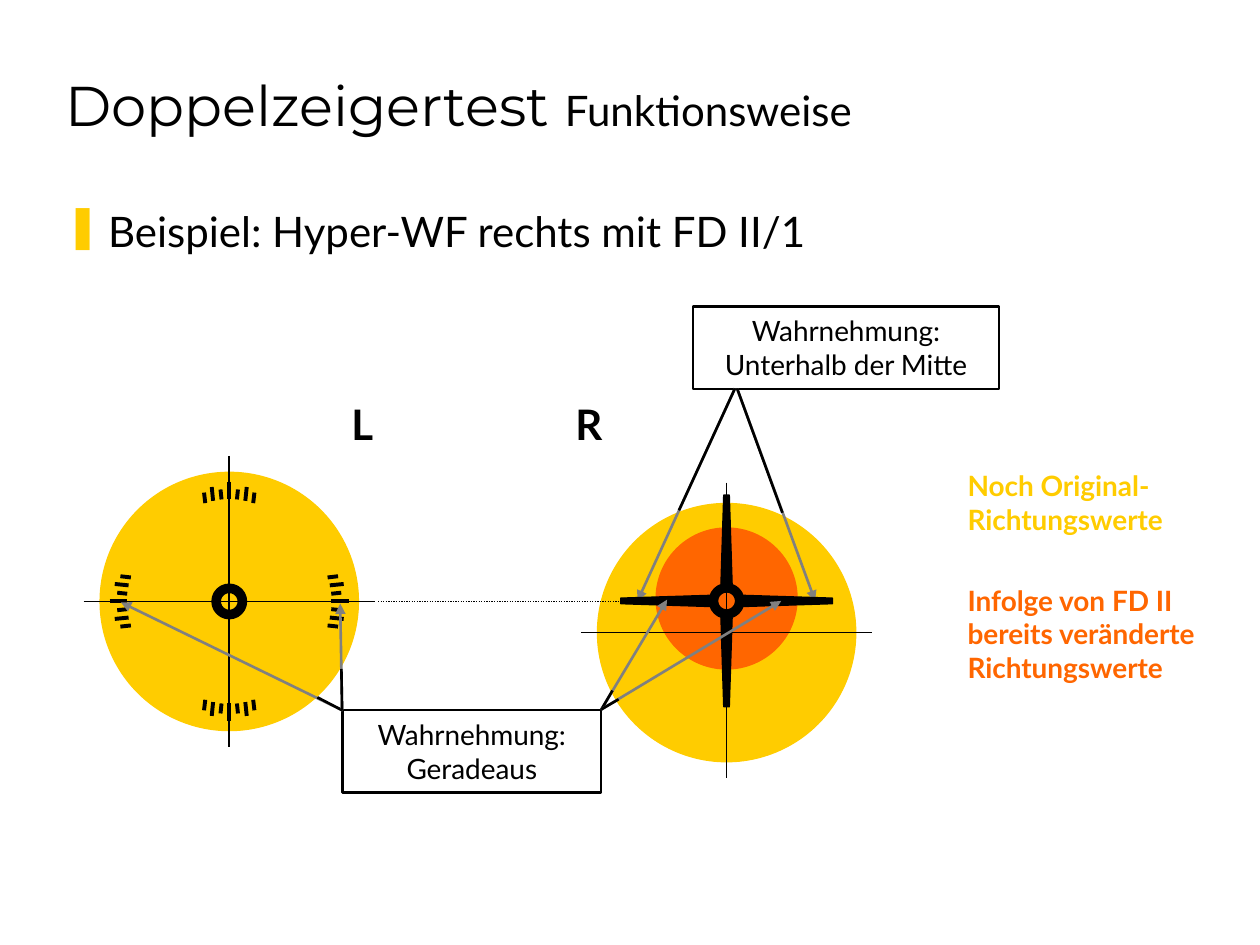
"""Build the slide explaining how the double pointer test works."""
from dataclasses import dataclass
from typing import NamedTuple

from lxml import etree
from pptx import Presentation, util as u
from pptx.dml.color import RGBColor
from pptx.enum import dml, shapes, text
from pptx.oxml import ns


@dataclass(frozen=True)
class Theme:
    black: str = "000000"
    white: str = "FFFFFF"
    gray: str = "808080"
    yellow: str = "FFCC00"
    orange: str = "FF6600"
    body_font: str = "Lato"
    title_font: str = "Montserrat"
    title: float = 32
    large: float = 24
    small: float = 16


T = Theme()


class Point(NamedTuple):
    x: float
    y: float


class Box(NamedTuple):
    x: float
    y: float
    w: float
    h: float


class Label(NamedTuple):
    words: str
    box: Box
    color: str
    size: float


class Pointer(NamedTuple):
    start: Point
    tip: Point
    edge: Point


class Tick(NamedTuple):
    outer_offset: float
    outer: float
    inner_offset: float
    inner: float


LEFT, RIGHT = Point(131, 343.7), Point(415.2, 343.4)
RIGHT_DISC = Point(415.2, 361.5)
DISC_R, FIXATION_R, RING_R, CROSS_R = 73.8, 40.3, 7.5, 83.2
NEEDLE = [(9.7, -3.2), (60.5, -1.6), (60.5, 1.6), (9.7, 3.2)]
DIRECTIONS = [(0, -1), (0, 1), (1, 0), (-1, 0)]
HALF_SCALE = [Tick(5, 64, 4.4, 58.3), Tick(10, 65.4, 9.2, 57.5), Tick(14.4, 62.2, 13.7, 56.2)]
SCALE = [Tick(0, 68.4, 0, 58.3)] + [
    Tick(side * t.outer_offset, t.outer, side * t.inner_offset, t.inner)
    for t in HALF_SCALE for side in (-1, 1)
]
LABELS = [
    Label("Noch Original-\nRichtungswerte", Box(545.8, 264.2, 156, 46), T.yellow, T.small),
    Label("Infolge von FD II bereits veränderte Richtungswerte",
          Box(545.8, 329.8, 168, 65), T.orange, T.small),
    Label("L", Box(193.7, 223.9, 28.8, 36), T.black, T.large),
    Label("R", Box(321.8, 223.9, 28.8, 36), T.black, T.large),
]
CALLOUTS = [
    (Label("Wahrnehmung: Unterhalb der Mitte", Box(396, 175, 175, 47.2), T.black, T.small), [
        Pointer(Point(420, 222), Point(364.3, 343.4), Point(388, 291.6)),
        Pointer(Point(421.2, 222), Point(465.8, 343.4), Point(447.1, 293)),
    ]),
    (Label("Wahrnehmung: Geradeaus", Box(195.8, 405.8, 147.8, 47.2), T.black, T.small), [
        Pointer(Point(195.8, 406), Point(69.1, 344.2), Point(181.4, 398.5)),
        Pointer(Point(195.5, 405.7), Point(194.4, 344.9), Point(195.1, 382.3)),
        Pointer(Point(343.6, 405.5), Point(381.2, 342.7), Point(350, 394.6)),
        Pointer(Point(343.6, 405.4), Point(446.4, 343.4), Point(353.5, 399.6)),
    ]),
]


def rotate(center: Point, direction: tuple, radius: float, offset: float) -> Point:
    """Place a point at a radius along a direction and an offset across it."""
    dx, dy = direction
    return Point(center.x + dx * radius + abs(dy) * offset,
                 center.y + dy * radius + abs(dx) * offset)


def add_text(p, words: str, *, size: float, color: str = T.black,
             font: str = T.body_font, bold: bool = False) -> None:
    """Append formatted text to a paragraph, breaking it at newlines."""
    for i, line in enumerate(words.split("\n")):
        if i:
            p.add_line_break()
        r = p.add_run()
        r.text = line
        r.font.name, r.font.size, r.font.bold = font, u.Pt(size), bold
        r.font.color.rgb = RGBColor.from_string(color)


def add_box(s, box: Box, anchor=text.MSO_ANCHOR.TOP):
    """Add a wrapping text box and return its first paragraph."""
    tf = s.shapes.add_textbox(*map(u.Pt, box)).text_frame
    tf.word_wrap, tf.vertical_anchor = True, anchor
    return tf.paragraphs[0]


def add_bullet(p, char: str, color: str, indent: float) -> None:
    """Give a paragraph a coloured bullet with a hanging indent."""
    pPr = p._p.get_or_add_pPr()
    pPr.set("marL", str(u.Pt(indent)))
    pPr.set("indent", str(-u.Pt(indent)))
    clr = etree.SubElement(pPr, ns.qn("a:buClr"))
    etree.SubElement(clr, ns.qn("a:srgbClr"), val=color)
    etree.SubElement(pPr, ns.qn("a:buChar"), char=char)


def style(sp, fill: str | None, line: str, width: float) -> None:
    """Set the fill and outline of a shape without a shadow."""
    sp.shadow.inherit = False
    if fill:
        sp.fill.solid()
        sp.fill.fore_color.rgb = RGBColor.from_string(fill)
    else:
        sp.fill.background()
    sp.line.color.rgb = RGBColor.from_string(line)
    sp.line.width = u.Pt(width)


def add_circle(s, c: Point, radius: float, fill: str | None, line: str, width: float = 0.75) -> None:
    """Draw a circle around a centre."""
    box = Box(c.x - radius, c.y - radius, 2 * radius, 2 * radius)
    style(s.shapes.add_shape(shapes.MSO_SHAPE.OVAL, *map(u.Pt, box)), fill, line, width)


def add_line(s, a: Point, b: Point, width: float, color: str = T.black, *,
             arrow: bool = False, dotted: bool = False) -> None:
    """Draw a straight line, optionally dotted or with an arrowhead at its end."""
    c = s.shapes.add_connector(shapes.MSO_CONNECTOR.STRAIGHT, *map(u.Pt, (*a, *b)))
    c.line.width, c.line.color.rgb = u.Pt(width), RGBColor.from_string(color)
    if dotted:
        c.line.dash_style = dml.MSO_LINE.ROUND_DOT
    if arrow:
        etree.SubElement(c.line._get_or_add_ln(), ns.qn("a:tailEnd"), type="triangle")
    etree.SubElement(c._element.spPr, ns.qn("a:effectLst"))


def add_cross(s, c: Point) -> None:
    """Draw the horizontal and vertical axes of a disc."""
    for direction in ((1, 0), (0, 1)):
        add_line(s, rotate(c, direction, -CROSS_R, 0), rotate(c, direction, CROSS_R, 0), 1)


def add_needle(s, direction: tuple) -> None:
    """Draw one tapering pointer of the right eye."""
    pts = [tuple(map(u.Pt, rotate(RIGHT, direction, *corner))) for corner in NEEDLE]
    fb = s.shapes.build_freeform(*pts[0], scale=1.0)
    fb.add_line_segments(pts[1:], close=True)
    style(fb.convert_to_shape(), T.black, T.black, 0.75)


def add_callout(s, label: Label, pointers: list[Pointer]) -> None:
    """Draw a framed label with arrows that are black until they reach a disc."""
    sp = s.shapes.add_shape(shapes.MSO_SHAPE.RECTANGLE, *map(u.Pt, label.box))
    style(sp, T.white, T.black, 1.5)
    tf = sp.text_frame
    tf.word_wrap, tf.vertical_anchor = True, text.MSO_ANCHOR.MIDDLE
    p = tf.paragraphs[0]
    p.alignment = text.PP_ALIGN.CENTER
    add_text(p, label.words, size=label.size, color=label.color)
    for pointer in pointers:
        add_line(s, pointer.start, pointer.tip, 1.5, T.gray, arrow=True)
        add_line(s, pointer.start, pointer.edge, 1.5)


def main() -> None:
    """Compose the slide and save it."""
    prs = Presentation()
    prs.slide_width, prs.slide_height = u.Pt(720), u.Pt(540)
    s = prs.slides.add_slide(prs.slide_layouts[6])

    p = add_box(s, Box(30.2, 17.3, 659.5, 64.8), text.MSO_ANCHOR.BOTTOM)
    add_text(p, "Doppelzeigertest ", size=T.title, font=T.title_font)
    add_text(p, "Funktionsweise", size=T.large)
    p = add_box(s, Box(30.2, 113.8, 681, 36))
    add_bullet(p, "❚", T.yellow, 24.5)
    add_text(p, "Beispiel: Hyper-WF rechts mit FD II/1", size=T.large)
    for label in LABELS:
        add_text(add_box(s, label.box), label.words, size=label.size, color=label.color, bold=True)

    for c in (RIGHT_DISC, LEFT):
        add_circle(s, c, DISC_R, T.yellow, T.yellow)
    add_circle(s, Point(RIGHT.x, 342), FIXATION_R, T.orange, T.orange)
    for c in (RIGHT_DISC, LEFT):
        add_cross(s, c)
    add_line(s, Point(RIGHT.x, 275.8), Point(RIGHT.x, 414), 1)

    add_callout(s, *CALLOUTS[0])
    for c in (RIGHT, LEFT):
        add_circle(s, c, RING_R, None, T.black, 5.5)
    for direction in DIRECTIONS:
        add_needle(s, direction)
        for t in SCALE:
            add_line(s, rotate(LEFT, direction, t.outer, t.outer_offset),
                     rotate(LEFT, direction, t.inner, t.inner_offset), 2.25)
    add_line(s, Point(216, LEFT.y), Point(354.2, LEFT.y), 0.75, dotted=True)
    add_callout(s, *CALLOUTS[1])
    prs.save("out.pptx")


if __name__ == "__main__":
    main()
